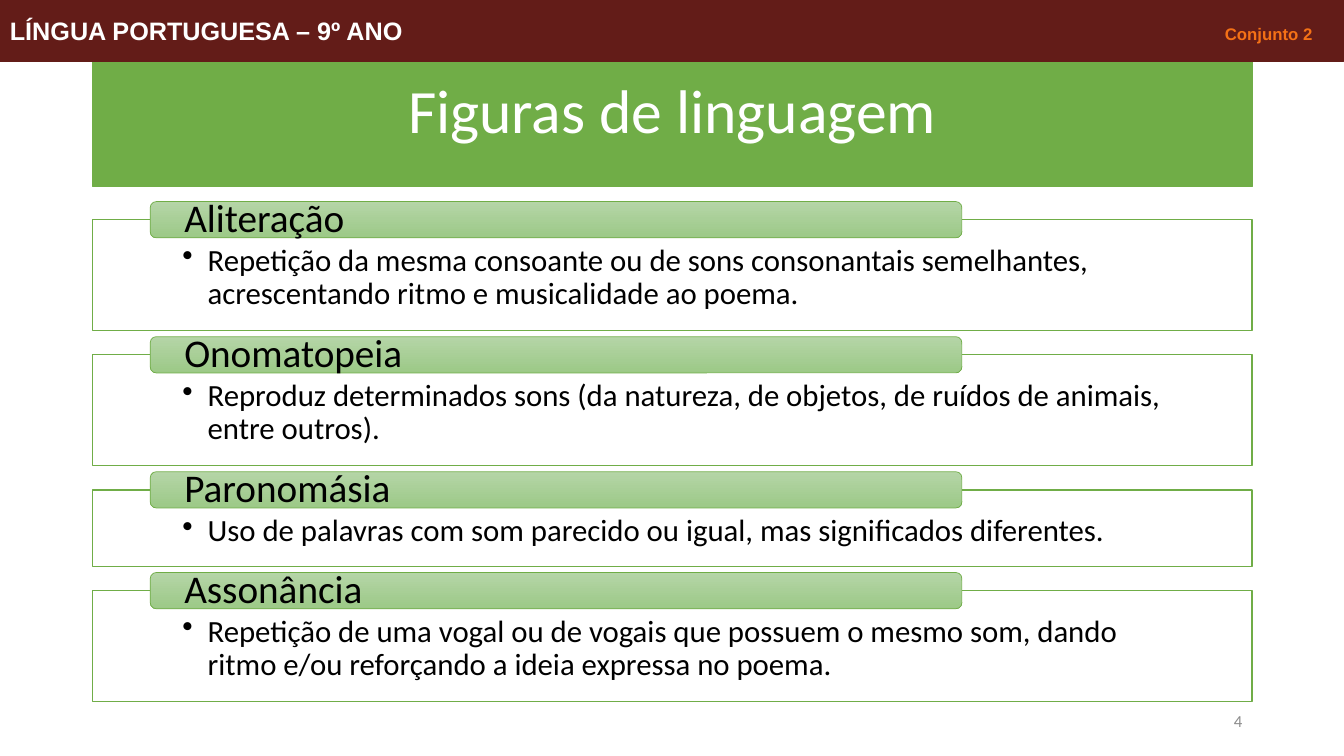
import pptx
import pptx.util
import pptx.dml.color
import pptx.enum.shapes
import pptx.enum.text
import pptx.oxml
import pptx.oxml.ns

Inches = pptx.util.Inches
Pt = pptx.util.Pt
RGBColor = pptx.dml.color.RGBColor
Form = pptx.enum.shapes.MSO_SHAPE
Align = pptx.enum.text.PP_ALIGN
Anchor = pptx.enum.text.MSO_ANCHOR

GREEN = RGBColor(0x70, 0xAD, 0x47)
PALE = RGBColor(0xB5, 0xD5, 0xA7)
LEAF = RGBColor(0x9C, 0xC9, 0x87)
WINE = RGBColor(0x63, 0x1C, 0x18)
ORANGE = RGBColor(0xF4, 0x71, 0x16)
GRAY = RGBColor(0x8C, 0x8C, 0x8C)
WHITE = RGBColor(0xFF, 0xFF, 0xFF)
BLACK = RGBColor(0, 0, 0)

TERMS = [
    ("Aliteração", 1.1, "Repetição da mesma consoante ou de sons consonantais "
     "semelhantes, acrescentando ritmo e musicalidade ao poema."),
    ("Onomatopeia", 1.1, "Reproduz determinados sons (da natureza, de objetos, "
     "de ruídos de animais, entre outros)."),
    ("Paronomásia", 0.76, "Uso de palavras com som parecido ou igual, mas "
     "significados diferentes."),
    ("Assonância", 1.1, "Repetição de uma vogal ou de vogais que possuem o mesmo "
     "som, dando ritmo e/ou reforçando a ideia expressa no poema."),
]
LEFT, WIDTH, TOP, GAP = 0.92, 11.5, 2.18, 0.24


def apply(item, **values):
    for name, value in values.items():
        setattr(item, name, value)


def add_run(para, text, size, color, face="Calibri", bold=False):
    run = para.add_run()
    run.text = text
    apply(run.font, size=Pt(size), name=face, bold=bold)
    run.font.color.rgb = color


def set_frame(shape, anchor, sides=0.1, top=0.05, base=0.05):
    frame = shape.text_frame
    apply(frame, word_wrap=True, vertical_anchor=anchor,
          auto_size=pptx.enum.text.MSO_AUTO_SIZE.NONE,
          margin_left=Inches(sides), margin_right=Inches(sides),
          margin_top=Inches(top), margin_bottom=Inches(base))
    return frame.paragraphs[0]


def paint(shape, fill, line, width):
    shape.fill.solid()
    shape.fill.fore_color.rgb = fill
    shape.line.color.rgb = line
    shape.line.width = Pt(width)


def add_form(slide, kind, box, fill, line, width):
    shape = slide.shapes.add_shape(kind, *map(Inches, box))
    shape.shadow.inherit = False
    paint(shape, fill, line, width)
    return shape


def add_mark(para, tag):
    props = para._p.get_or_add_pPr()
    space = pptx.oxml.ns.nsdecls("a")
    props.append(pptx.oxml.parse_xml(tag.replace(" ", f" {space} ", 1)))
    return props


def add_title(slide):
    title = slide.shapes.title
    apply(title, left=Inches(LEFT), top=Inches(0.4),
          width=Inches(WIDTH), height=Inches(1.45))
    paint(title, GREEN, GREEN, 1)
    para = set_frame(title, Anchor.MIDDLE)
    apply(para, alignment=Align.CENTER, line_spacing=0.9)
    add_run(para, "Figuras de linguagem", 44, WHITE)


def add_term(slide, top, high, name, text):
    card = add_form(slide, Form.RECTANGLE, (LEFT, top, WIDTH, high), WHITE, GREEN, 1)
    para = set_frame(card, Anchor.TOP, 0.89, 0.25, 0.17)
    apply(para, alignment=Align.LEFT, line_spacing=0.9)
    props = add_mark(para, '<a:buChar char="•"/>')
    props.set("marL", str(Inches(0.25)))
    props.set("indent", str(-Inches(0.25)))
    add_run(para, text, 22, BLACK)

    label = add_form(slide, Form.ROUNDED_RECTANGLE,
                     (1.49, top - 0.18, 8.05, 0.36), PALE, GREEN, 0.5)
    label.fill.gradient()
    label.fill.gradient_angle = 270
    for stop, color in zip(label.fill.gradient_stops, (PALE, LEAF)):
        stop.color.rgb = color
    para = set_frame(label, Anchor.MIDDLE, 0.32, 0, 0)
    apply(para, alignment=Align.LEFT, line_spacing=0.9)
    add_run(para, name, 28, BLACK)


def add_page(slide):
    box = slide.shapes.add_textbox(*map(Inches, (9.42, 6.95, 3, 0.4)))
    para = set_frame(box, Anchor.MIDDLE)
    para.alignment = Align.RIGHT
    add_run(para, "4", 12, GRAY)


def add_head(slide):
    band = add_form(slide, Form.RECTANGLE, (0, 0, 13.33, 0.61), WINE, WINE, 0.75)
    para = set_frame(band, Anchor.MIDDLE)
    para.alignment = Align.LEFT
    add_mark(para, f'<a:tabLst ><a:tab pos="{Inches(12.05)}" algn="l"/></a:tabLst>')
    add_run(para, "LÍNGUA PORTUGUESA – 9º ANO\t", 18, WHITE, "Arial", True)
    add_run(para, "Conjunto 2", 12, ORANGE, "Arial", True)


def main():
    """Build the slide on figures of speech and save it."""
    deck = pptx.Presentation()
    apply(deck, slide_width=Inches(13.33), slide_height=Inches(7.5))
    slide = deck.slides.add_slide(deck.slide_layouts[5])
    add_title(slide)
    top = TOP
    for name, high, text in TERMS:
        add_term(slide, top, high, name, text)
        top += high + GAP
    add_page(slide)
    add_head(slide)
    deck.save("out.pptx")


if __name__ == "__main__":
    main()
